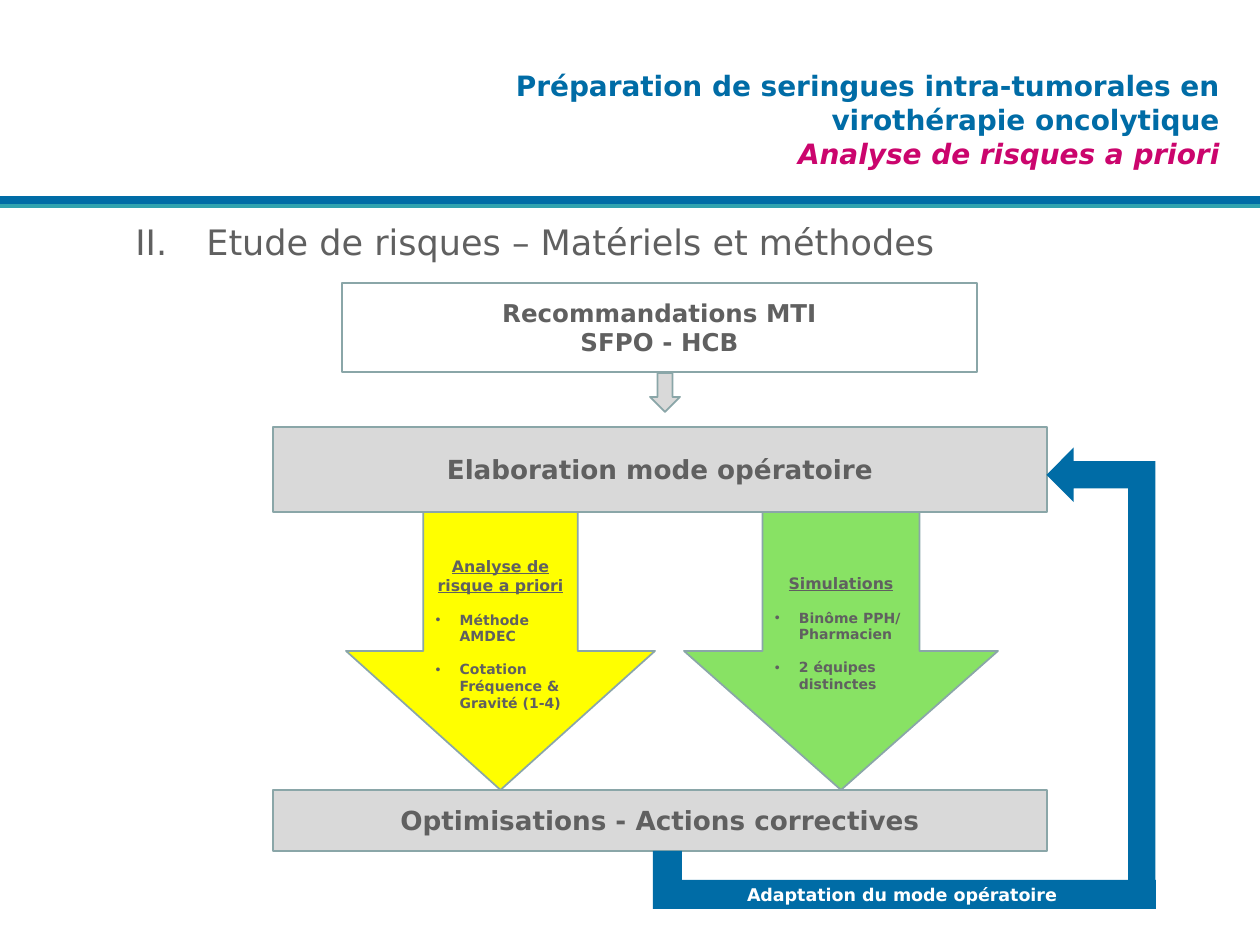
from dataclasses import dataclass
from typing import NamedTuple

from lxml.etree import SubElement
from pptx import Presentation
from pptx.dml.color import RGBColor
from pptx.enum.shapes import MSO_CONNECTOR, MSO_SHAPE
from pptx.enum.text import MSO_ANCHOR, PP_ALIGN
from pptx.oxml.ns import qn
from pptx.util import Emu, Pt


@dataclass(frozen=True)
class Theme:
    font: str = "DejaVu Sans"
    blue: str = "006CA6"
    teal: str = "30A3AF"
    pink: str = "CB056D"
    text: str = "606060"
    edge: str = "8AA6A8"
    gray: str = "D9D9D9"
    yellow: str = "FFFF00"
    green: str = "88E264"
    white: str = "FFFFFF"
    head: int = 20
    title: int = 16
    step: int = 15
    note: int = 14
    label: int = 10
    topic: int = 9
    item: int = 8


class Box(NamedTuple):
    x: int
    y: int
    w: int
    h: int


class Para(NamedTuple):
    text: str
    size: int
    color: str
    align: PP_ALIGN = PP_ALIGN.CENTER
    bold: bool = True
    italic: bool = False
    under: bool = False
    bullet: tuple = ()
    indent: int = 0
    before: float = 0


class Block(NamedTuple):
    kind: MSO_SHAPE
    box: Box
    fill: str
    line: str = ""
    paras: tuple = ()
    top: int = 0
    turn: int = 0


class Rule(NamedTuple):
    y: int
    color: str


THEME = Theme()
WIDE, HIGH = 1260, 945
DOT = ("buChar", {"char": "•"})
ROMAN = ("buAutoNum", {"type": "romanUcPeriod", "startAt": "2"})


def px(n: int) -> Emu:
    """Turn pixels into EMU."""
    return Emu(round(n * 914400 / 126))


def rgb(code: str) -> RGBColor:
    """Turn a hex code into a colour."""
    return RGBColor.from_string(code)


def write(frame, paras: tuple, top: int = 0) -> None:
    """Fill a text frame, from the top if an inset is given."""
    frame.word_wrap = True
    frame.margin_top, frame.margin_bottom = px(top), 0
    frame.vertical_anchor = MSO_ANCHOR.TOP if top else MSO_ANCHOR.MIDDLE
    for i, para in enumerate(paras):
        line = frame.add_paragraph() if i else frame.paragraphs[0]
        line.text, line.alignment = para.text, para.align
        if para.before:
            line.space_before = Pt(para.before)
        if para.bullet:
            tag, attrs = para.bullet
            props = line._p.get_or_add_pPr()
            props.set("marL", str(px(para.indent)))
            props.set("indent", str(-px(para.indent)))
            SubElement(props, qn("a:buFont"), typeface="Arial" if tag == "buChar" else THEME.font)
            SubElement(props, qn(f"a:{tag}"), attrs)
        font = line.font
        font.name, font.size = THEME.font, Pt(para.size)
        font.bold, font.italic, font.underline = para.bold, para.italic, para.under
        font.color.rgb = rgb(para.color)


def draw_block(slide, block: Block) -> None:
    """Draw one filled shape with its text."""
    shape = slide.shapes.add_shape(block.kind, *map(px, block.box))
    shape.shadow.inherit = False
    shape.rotation = block.turn
    shape.fill.solid()
    shape.fill.fore_color.rgb = rgb(block.fill)
    if block.line:
        shape.line.color.rgb = rgb(block.line)
        shape.line.width = Pt(1)
    else:
        shape.line.fill.background()
    if block.paras:
        write(shape.text_frame, block.paras, block.top)


def draw_text(slide, box: Box, paras: tuple, top: int) -> None:
    """Draw one text box."""
    write(slide.shapes.add_textbox(*map(px, box)).text_frame, paras, top)


def draw_rule(slide, rule: Rule) -> None:
    """Draw one rule across the slide."""
    line = slide.shapes.add_connector(
        MSO_CONNECTOR.STRAIGHT, 0, px(rule.y), px(WIDE), px(rule.y))
    line.line.color.rgb = rgb(rule.color)
    line.line.width = Pt(5)
    SubElement(line._element.spPr, qn("a:effectLst"))


def list_paras(topic: str, *items: str) -> tuple:
    """Make an underlined topic with bullets below."""
    t = THEME
    return (Para(topic, t.topic, t.text, under=True),) + tuple(
        Para(item, t.item, t.text, PP_ALIGN.LEFT, bullet=DOT, indent=24, before=9.3)
        for item in items)


def main() -> None:
    """Build and save the slide."""
    t = THEME
    rect, down = MSO_SHAPE.RECTANGLE, MSO_SHAPE.DOWN_ARROW
    rules = (Rule(204, t.teal), Rule(200, t.blue))
    blocks = (
        Block(rect, Box(342, 283, 635, 89), t.white, t.edge, (
            Para("Recommandations MTI", t.note, t.text),
            Para("SFPO - HCB", t.note, t.text))),
        Block(rect, Box(273, 427, 774, 85), t.gray, t.edge, (
            Para("Elaboration mode opératoire", t.step, t.text),)),
        Block(down, Box(346, 512, 309, 278), t.yellow, t.edge, list_paras(
            "Analyse de risque a priori", "Méthode AMDEC",
            "Cotation Fréquence & Gravité (1-4)"), 45),
        Block(rect, Box(273, 790, 774, 61), t.gray, t.edge, (
            Para("Optimisations - Actions correctives", t.step, t.text),)),
        Block(down, Box(650, 373, 30, 39), t.gray, t.edge),
        Block(MSO_SHAPE.CORNER, Box(653, 851, 503, 58), t.blue),
        Block(MSO_SHAPE.BENT_UP_ARROW, Box(883, 611, 436, 109), t.blue, turn=270),
        Block(down, Box(684, 512, 314, 278), t.green, t.edge, list_paras(
            "Simulations", "Binôme PPH/ Pharmacien", "2 équipes distinctes"), 62),
        Block(rect, Box(682, 883, 440, 24), t.blue, paras=(
            Para("Adaptation du mode opératoire", t.label, t.white),)),
    )
    deck = Presentation()
    deck.slide_width, deck.slide_height = px(WIDE), px(HIGH)
    slide = deck.slides.add_slide(deck.slide_layouts[6])
    for rule in rules:
        draw_rule(slide, rule)
    for block in blocks:
        draw_block(slide, block)
    draw_text(slide, Box(123, 213, 1063, 50), (
        Para("Etude de risques – Matériels et méthodes", t.head, t.text,
             PP_ALIGN.LEFT, False, bullet=ROMAN, indent=71),), 8)
    draw_text(slide, Box(408, 55, 824, 130), (
        Para("Préparation de seringues intra-tumorales en virothérapie oncolytique",
             t.title, t.blue, PP_ALIGN.RIGHT),
        Para("Analyse de risques a priori", t.title, t.pink, PP_ALIGN.RIGHT,
             italic=True)), 14)
    deck.save("out.pptx")


if __name__ == "__main__":
    main()
